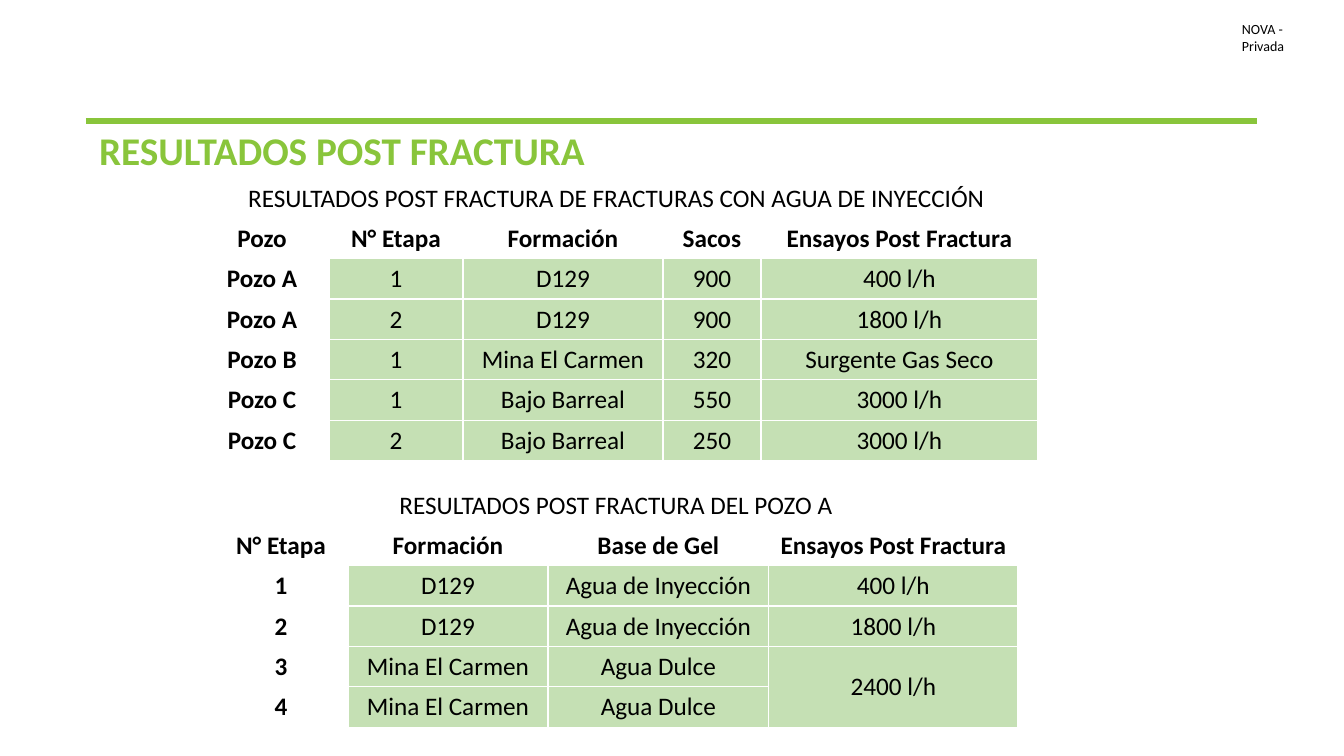
from lxml.etree import SubElement
from pptx import Presentation
from pptx.dml.color import RGBColor
from pptx.enum.text import MSO_ANCHOR, MSO_AUTO_SIZE, PP_ALIGN
from pptx.oxml import parse_xml
from pptx.oxml.ns import nsdecls, qn
from pptx.util import Emu, Pt

GREEN = RGBColor(0x89, 0xC5, 0x3B)
PALE_GREEN = RGBColor(0xC5, 0xE0, 0xB4)
WHITE = RGBColor(0xFF, 0xFF, 0xFF)
BLACK = RGBColor(0, 0, 0)
FONT = "Calibri"
ROW_HEIGHT = 40


def px(length):
    return Emu(round(length * 914400 / 100.8))


def write(frame, text, size=18, color=BLACK, bold=False, align=PP_ALIGN.LEFT):
    paragraph = frame.paragraphs[0]
    paragraph.alignment = align
    run = paragraph.add_run()
    run.text = text
    run.font.name = FONT
    run.font.size = Pt(size)
    run.font.bold = bold
    run.font.color.rgb = color


class ResultsSlide:
    def __init__(self, deck):
        self.slide = deck.slides.add_slide(deck.slide_layouts[5])
        self.shapes = self.slide.shapes

    def title(self, text, x, y, width, height):
        heading = self.shapes.title
        heading.left, heading.top = px(x), px(y)
        heading.width, heading.height = px(width), px(height)
        frame = heading.text_frame
        frame.auto_size = MSO_AUTO_SIZE.SHAPE_TO_FIT_TEXT
        frame.vertical_anchor = MSO_ANCHOR.TOP
        write(frame, text, size=28, color=GREEN, bold=True)

    def label(self, text, x, y, width, height):
        frame = self.shapes.add_textbox(px(x), px(y), px(width), px(height)).text_frame
        frame.margin_left = frame.margin_right = 0
        frame.margin_top = frame.margin_bottom = 0
        frame.auto_size = MSO_AUTO_SIZE.SHAPE_TO_FIT_TEXT
        write(frame, text, size=10)

    def rule(self, x1, x2, y):
        line = self.shapes.add_connector(1, px(x1), px(y), px(x2), px(y))
        line.line.color.rgb = GREEN
        line.line.width = Pt(4.5)
        SubElement(line._element.spPr, qn("a:effectLst"))

    def table(self, caption, rows, x, y, widths):
        grid = [[caption] + [None] * (len(widths) - 1)] + rows
        table = self.shapes.add_table(
            len(grid), len(widths), px(x), px(y),
            px(sum(widths)), px(ROW_HEIGHT * len(grid))).table
        table.first_row = table.horz_banding = False
        for column, width in zip(table.columns, widths):
            column.width = px(width)
        for row in table.rows:
            row.height = px(ROW_HEIGHT)
        for r, values in enumerate(grid):
            for c, value in enumerate(values):
                # Header row and first column are bold and unfilled
                is_body = r > 1 and c > 0
                self.cell(table.cell(r, c), value, is_body,
                          bold=r > 0 and not is_body, bottom=3 if r == 0 else 1)
        table.cell(0, 0).merge(table.cell(0, len(widths) - 1))
        return table

    def cell(self, cell, value, is_body, bold, bottom):
        cell.margin_left = cell.margin_right = px(7)
        cell.vertical_anchor = MSO_ANCHOR.MIDDLE
        if is_body:
            cell.fill.solid()
            cell.fill.fore_color.rgb = PALE_GREEN
        else:
            cell.fill.background()
        properties = cell._tc.get_or_add_tcPr()
        borders = {"lnL": 1, "lnR": 1, "lnT": 1, "lnB": bottom}
        for index, (side, width) in enumerate(borders.items()):
            properties.insert(index, parse_xml(
                f'<a:{side} {nsdecls("a")} w="{Pt(width)}"><a:solidFill>'
                f'<a:srgbClr val="{WHITE}"/></a:solidFill></a:{side}>'))
        if value is not None:
            write(cell.text_frame, value, bold=bold, align=PP_ALIGN.CENTER)


def main():
    deck = Presentation()
    deck.slide_width, deck.slide_height = px(1344), px(756)
    results = ResultsSlide(deck)

    # Classification label
    results.label("NOVA - Privada", 1242, 21, 84, 17)

    # Results by well
    results.table(
        "RESULTADOS POST FRACTURA DE FRACTURAS CON AGUA DE INYECCIÓN",
        [["Pozo", "N° Etapa", "Formación", "Sacos", "Ensayos Post Fractura"],
         ["Pozo A", "1", "D129", "900", "400 l/h"],
         ["Pozo A", "2", "D129", "900", "1800 l/h"],
         ["Pozo B", "1", "Mina El Carmen", "320", "Surgente Gas Seco"],
         ["Pozo C", "1", "Bajo Barreal", "550", "3000 l/h"],
         ["Pozo C", "2", "Bajo Barreal", "250", "3000 l/h"]],
        195, 178, [134, 134, 200, 98, 277])

    # Results by stage of well A; the last two stages share one test
    stages = results.table(
        "RESULTADOS POST FRACTURA DEL POZO A",
        [["N° Etapa", "Formación", "Base de Gel", "Ensayos Post Fractura"],
         ["1", "D129", "Agua de Inyección", "400 l/h"],
         ["2", "D129", "Agua de Inyección", "1800 l/h"],
         ["3", "Mina El Carmen", "Agua Dulce", "2400 l/h"],
         ["4", "Mina El Carmen", "Agua Dulce", None]],
        214, 485, [134, 200, 221, 249])
    stages.cell(4, 3).merge(stages.cell(5, 3))

    # Title under its green rule
    results.title("RESULTADOS POST FRACTURA", 89, 121, 1150, 57)
    results.rule(86, 1257, 121)

    deck.save("out.pptx")


if __name__ == "__main__":
    main()
